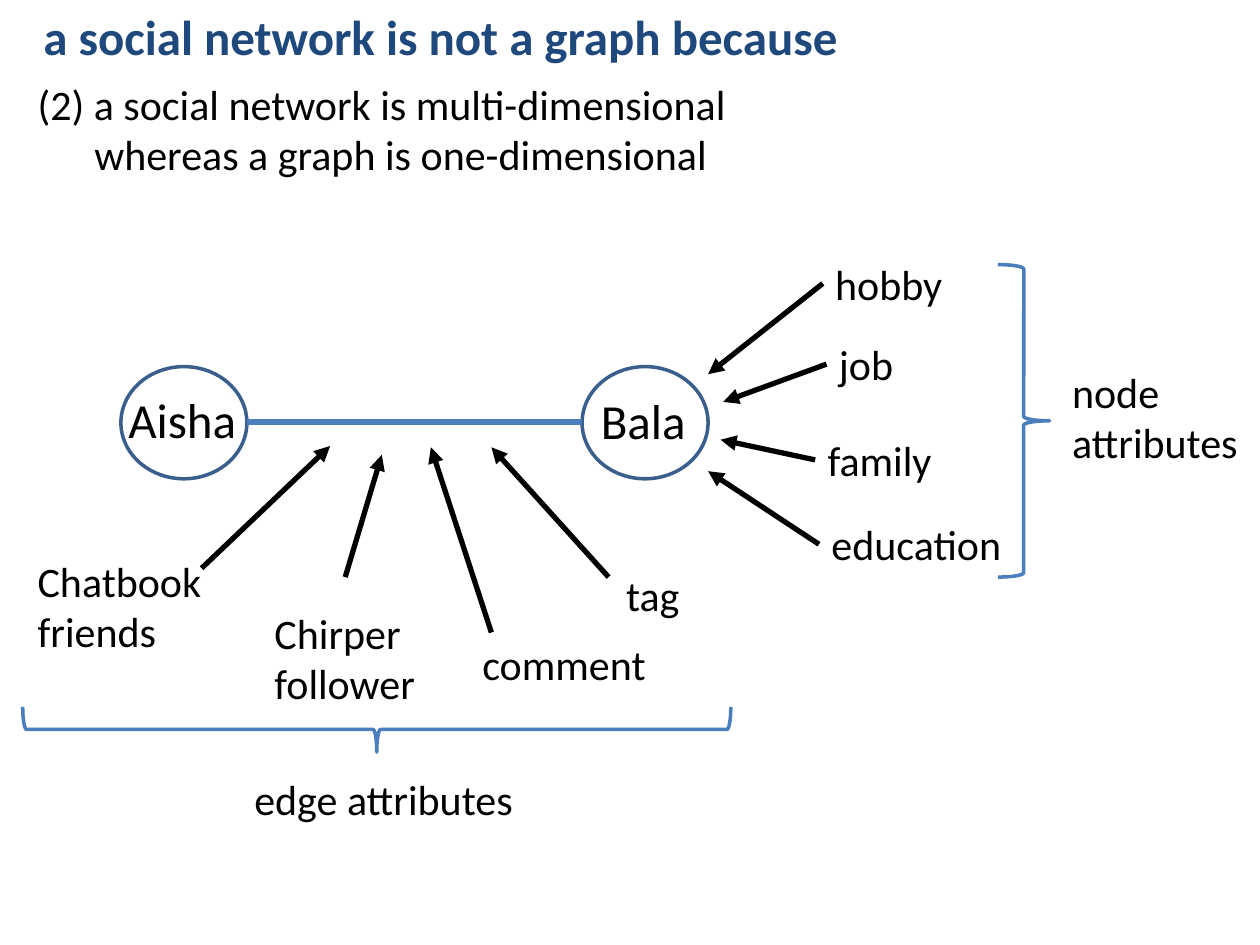
from lxml import etree
from pptx import Presentation
from pptx.dml.color import RGBColor
from pptx.enum.shapes import MSO_CONNECTOR, MSO_SHAPE
from pptx.enum.text import MSO_AUTO_SIZE, PP_ALIGN
from pptx.oxml.ns import qn
from pptx.util import Inches, Pt

STRAIGHT = MSO_CONNECTOR.STRAIGHT
ELLIPSE, RIGHT_BRACE = MSO_SHAPE.OVAL, MSO_SHAPE.RIGHT_BRACE
CENTER = PP_ALIGN.CENTER
NO_AUTOFIT = MSO_AUTO_SIZE.NONE
BLACK, TITLE_BLUE, NODE_BLUE, LINE_BLUE = "000000", "1F497D", "3A5F8C", "4B7EBC"


def write_lines(shape, lines, size=24, color=BLACK, bold=False):
    """Fill a shape with one paragraph per line."""
    frame = shape.text_frame
    frame.word_wrap = True
    frame.auto_size = NO_AUTOFIT
    for index, line in enumerate(lines):
        paragraph = frame.add_paragraph() if index else frame.paragraphs[0]
        run = paragraph.add_run()
        run.text = line
        run.font.name = "Calibri"
        run.font.size = Pt(size)
        run.font.bold = bold
        run.font.color.rgb = RGBColor.from_string(color)


def add_line(start, end, color, arrow=False):
    line = slide.shapes.add_connector(STRAIGHT, *map(Inches, start + end))
    line.line.color.rgb = RGBColor.from_string(color)
    line.line.width = Pt(3)
    properties = line._element.spPr
    if arrow:
        etree.SubElement(properties.find(qn("a:ln")), qn("a:tailEnd"), type="triangle")
    etree.SubElement(properties, qn("a:effectLst"))


presentation = Presentation()
presentation.slide_width = Inches(10)
presentation.slide_height = Inches(7.5)
slide = presentation.slides.add_slide(presentation.slide_layouts[5])

# Title
title = slide.shapes.title
title.left, title.top = Inches(0), Inches(0)
title.width, title.height = Inches(6.99), Inches(0.57)
write_lines(title, ["a social network is not a graph because"], 28, TITLE_BLUE, True)
title.text_frame.paragraphs[0].alignment = CENTER

# Text boxes: left, top, width, height, size, lines
texts = [
    (0.2, 0.57, 5.88, 0.91, 24, ["(2) a social network is multi-dimensional",
                                 "whereas a graph is one-dimensional"]),
    (0.92, 3.04, 1.17, 0.57, 28, ["Aisha"]),
    (4.67, 3.05, 0.92, 0.57, 28, ["Bala"]),
    (0.2, 4.36, 1.58, 0.91, 24, ["Chatbook friends"]),
    (2.08, 4.77, 1.58, 0.91, 24, ["Chirper follower"]),
    (3.73, 5.02, 1.58, 0.5, 24, ["comment"]),
    (4.87, 4.47, 0.65, 0.5, 24, ["tag"]),
    (6.53, 2, 1.27, 0.5, 24, ["hobby"]),
    (6.56, 2.64, 1.27, 0.5, 24, ["job"]),
    (6.47, 3.4, 1.27, 0.5, 24, ["family"]),
    (6.5, 4.07, 1.58, 0.5, 24, ["education"]),
    (8.41, 2.86, 1.59, 0.91, 24, ["node", "attributes"]),
    (1.92, 6.09, 2.33, 0.5, 24, ["edge attributes"]),
]
text_boxes = []
for *box, size, lines in texts:
    text_box = slide.shapes.add_textbox(*map(Inches, box))
    write_lines(text_box, lines, size)
    text_boxes.append(text_box)

# The second line of the statement starts below the text after "(2)"
second_line = text_boxes[0].text_frame.paragraphs[1]
second_line._p.get_or_add_pPr().set("marL", str(Inches(0.45)))

# Node circles and braces: preset, left, top, width, height, rotation, colour
outlines = [
    (ELLIPSE, 0.96, 2.91, 1, 0.89, 0, NODE_BLUE),
    (ELLIPSE, 4.62, 2.91, 1, 0.89, 0, NODE_BLUE),
    (RIGHT_BRACE, 7.92, 2.1, 0.41, 2.48, 0, LINE_BLUE),
    (RIGHT_BRACE, 2.81, 2.98, 0.36, 5.62, 90, LINE_BLUE),
]
for preset, *box, rotation, color in outlines:
    shape = slide.shapes.add_shape(preset, *map(Inches, box))
    shape.rotation = rotation
    shape.shadow.inherit = False
    shape.fill.background()
    shape.line.color.rgb = RGBColor.from_string(color)
    shape.line.width = Pt(2)

# Edge between the two nodes
add_line((1.96, 3.35), (4.62, 3.35), LINE_BLUE)

# Arrows from the attributes to the edge, then to the node
arrows = [
    ((1.6, 4.51), (2.62, 3.54)),
    ((2.74, 4.58), (3.03, 3.61)),
    ((3.9, 5.02), (3.42, 3.55)),
    ((4.83, 4.58), (3.9, 3.55)),
    ((6.53, 2.25), (5.62, 2.97)),
    ((6.56, 2.89), (5.74, 3.19)),
    ((6.47, 3.65), (5.72, 3.49)),
    ((6.5, 4.32), (5.62, 3.74)),
]
for start, end in arrows:
    add_line(start, end, BLACK, arrow=True)

presentation.save("out.pptx")
